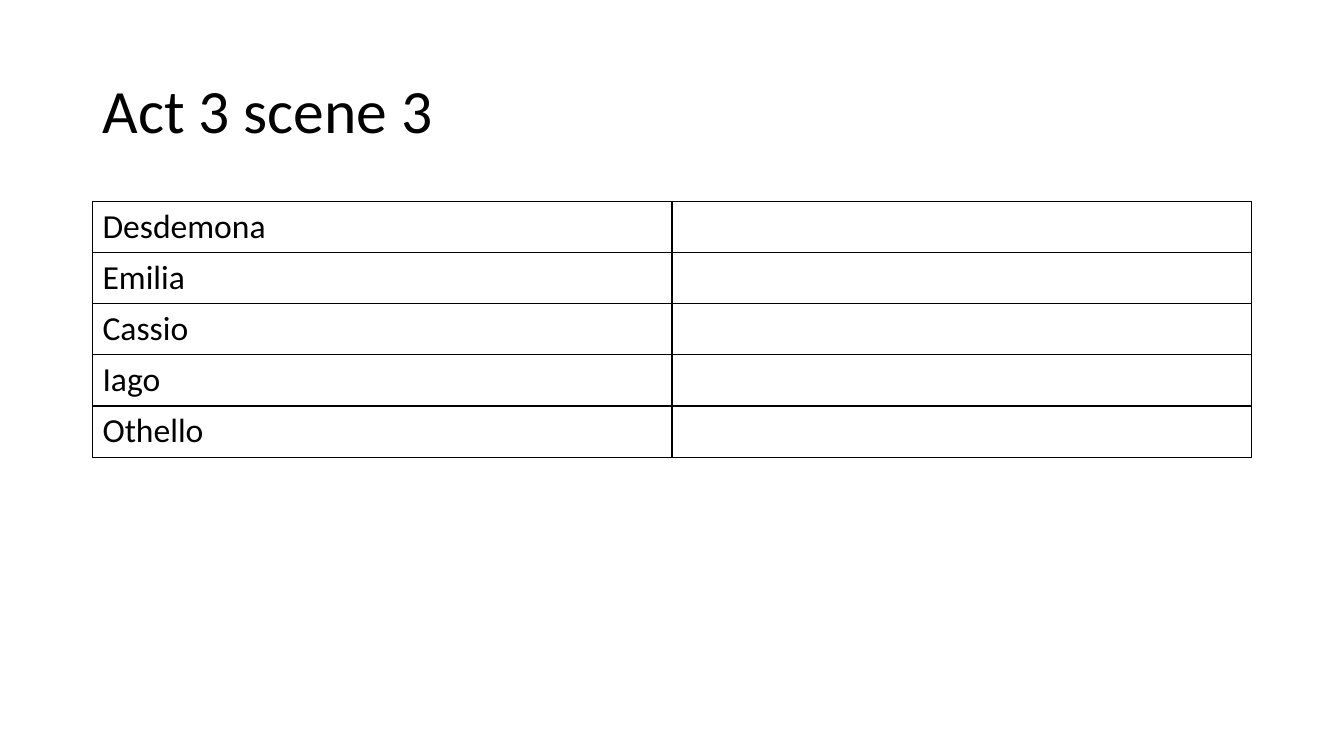
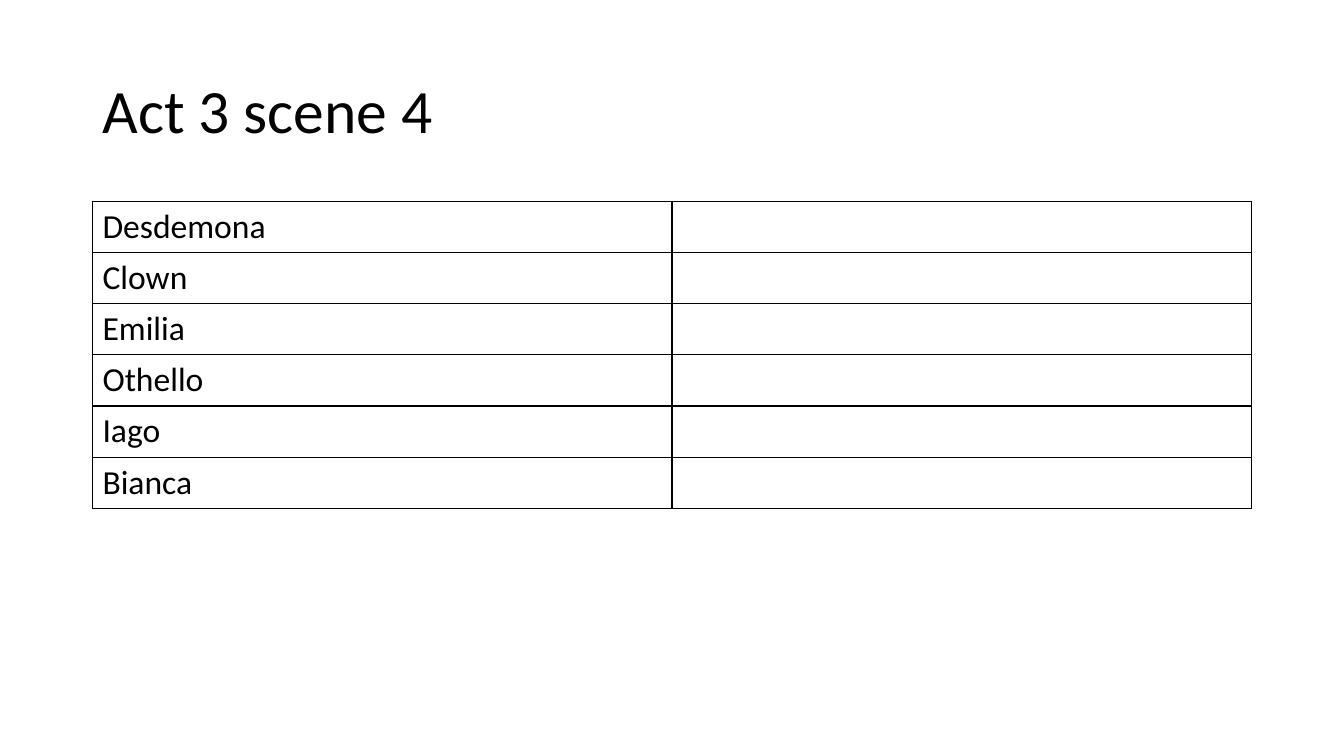
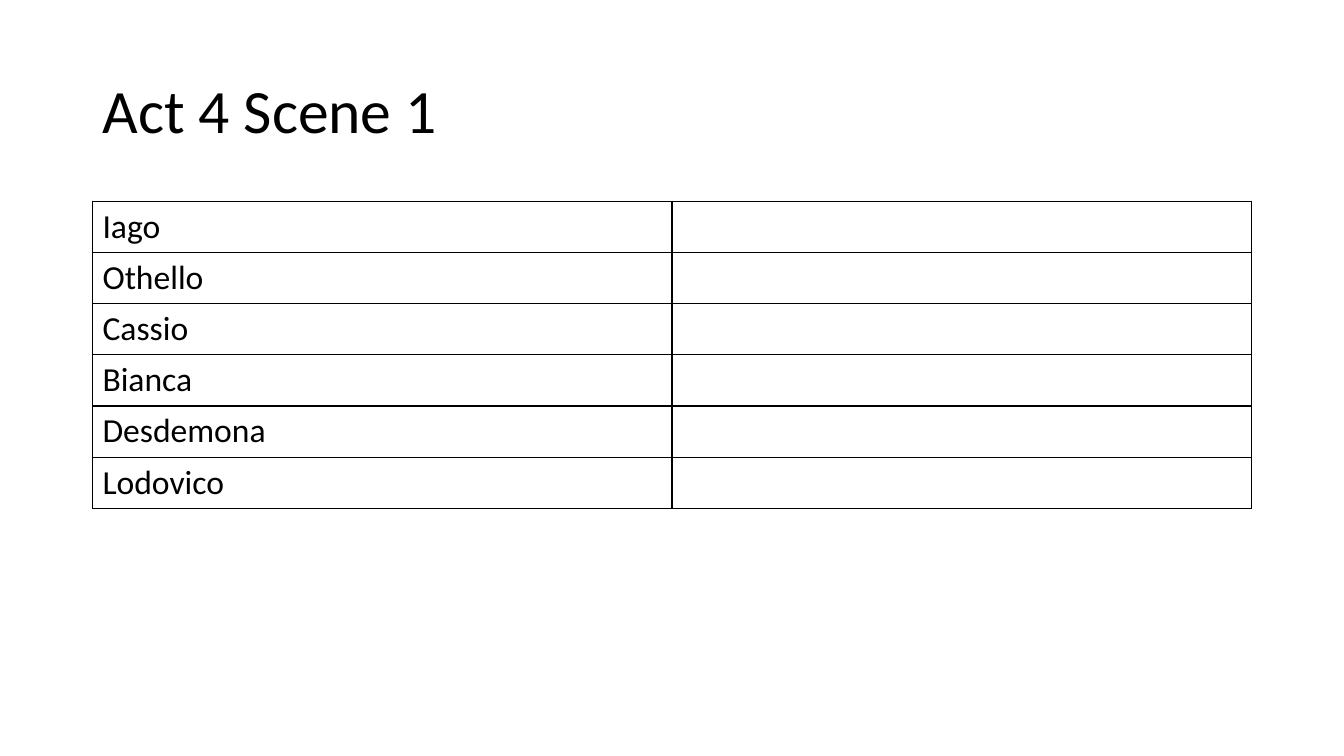
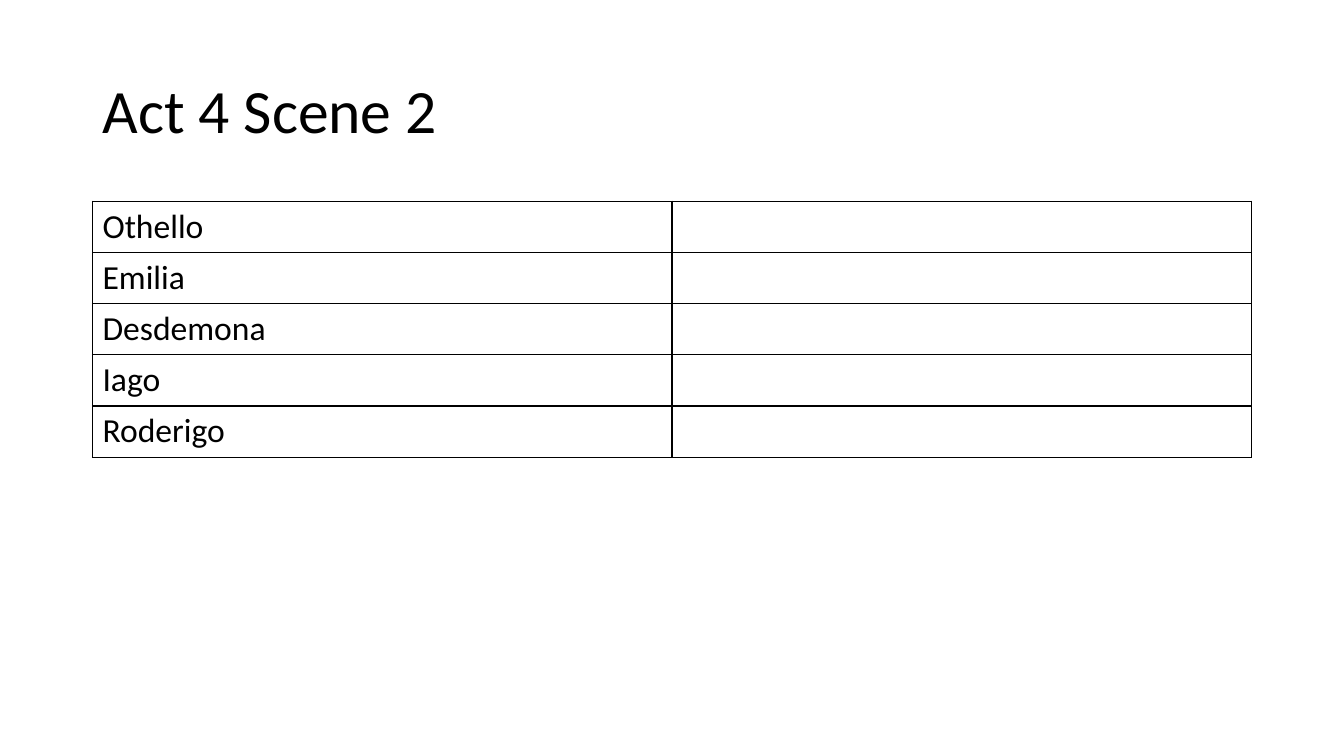
from lxml.etree import SubElement
from pptx import Presentation
from pptx.dml.color import RGBColor
from pptx.enum.text import MSO_ANCHOR as Anchor, PP_ALIGN as Align
from pptx.oxml.ns import qn
from pptx.util import Cm, Pt

INK = "000000"
LEFT, WIDTH = Cm(2.33), Cm(29.21)
TABLE_TOP, ROW_HEIGHT = Cm(5.07), Cm(1.29)
TITLE_PLACE = {"left": LEFT, "top": Cm(1.01), "width": WIDTH, "height": Cm(3.68)}
TITLE_FONT = {"name": "Calibri", "size": Pt(44)}
CELL_FONT = {"name": "Calibri", "size": Pt(24)}
TITLE_PARA = {"alignment": Align.LEFT, "line_spacing": 0.9}

SCENES = {
    "Act 3 scene 3": ["Desdemona", "Emilia", "Cassio", "Iago", "Othello"],
    "Act 3 scene 4": ["Desdemona", "Clown", "Emilia", "Othello", "Iago", "Bianca"],
    "Act 4 Scene 1": ["Iago", "Othello", "Cassio", "Bianca", "Desdemona", "Lodovico"],
    "Act 4 Scene 2": ["Othello", "Emilia", "Desdemona", "Iago", "Roderigo"],
}


def color(value):
    return RGBColor.from_string(value)


def write(para, text, font_format):
    span = para.add_run()
    span.text = text
    for name, value in font_format.items():
        setattr(span.font, name, value)
    span.font.color.rgb = color(INK)


deck = Presentation()
deck.slide_width, deck.slide_height = Cm(33.87), Cm(19.05)
layout = deck.slide_layouts.get_by_name("Title Only")
for name, value in TITLE_PLACE.items():
    setattr(layout.placeholders[0], name, value)

for heading, characters in SCENES.items():
    page = deck.slides.add_slide(layout)
    title = page.shapes.title.text_frame
    title.vertical_anchor = Anchor.MIDDLE
    para = title.paragraphs[0]
    for name, value in TITLE_PARA.items():
        setattr(para, name, value)
    write(para, heading, TITLE_FONT)

    count = len(characters)
    table = page.shapes.add_table(
        count, 2, LEFT, TABLE_TOP, WIDTH, ROW_HEIGHT * count
    ).table
    table.first_row = table.horz_banding = False

    for cell in table.iter_cells():
        properties = cell._tc.get_or_add_tcPr()
        for side in ("a:lnL", "a:lnR", "a:lnT", "a:lnB"):
            border = SubElement(properties, qn(side), w=str(Pt(1)))
            fill = SubElement(border, qn("a:solidFill"))
            SubElement(fill, qn("a:srgbClr"), val=INK)
        cell.fill.background()

    for row, character in enumerate(characters):
        write(table.cell(row, 0).text_frame.paragraphs[0], character, CELL_FONT)

deck.save("out.pptx")
